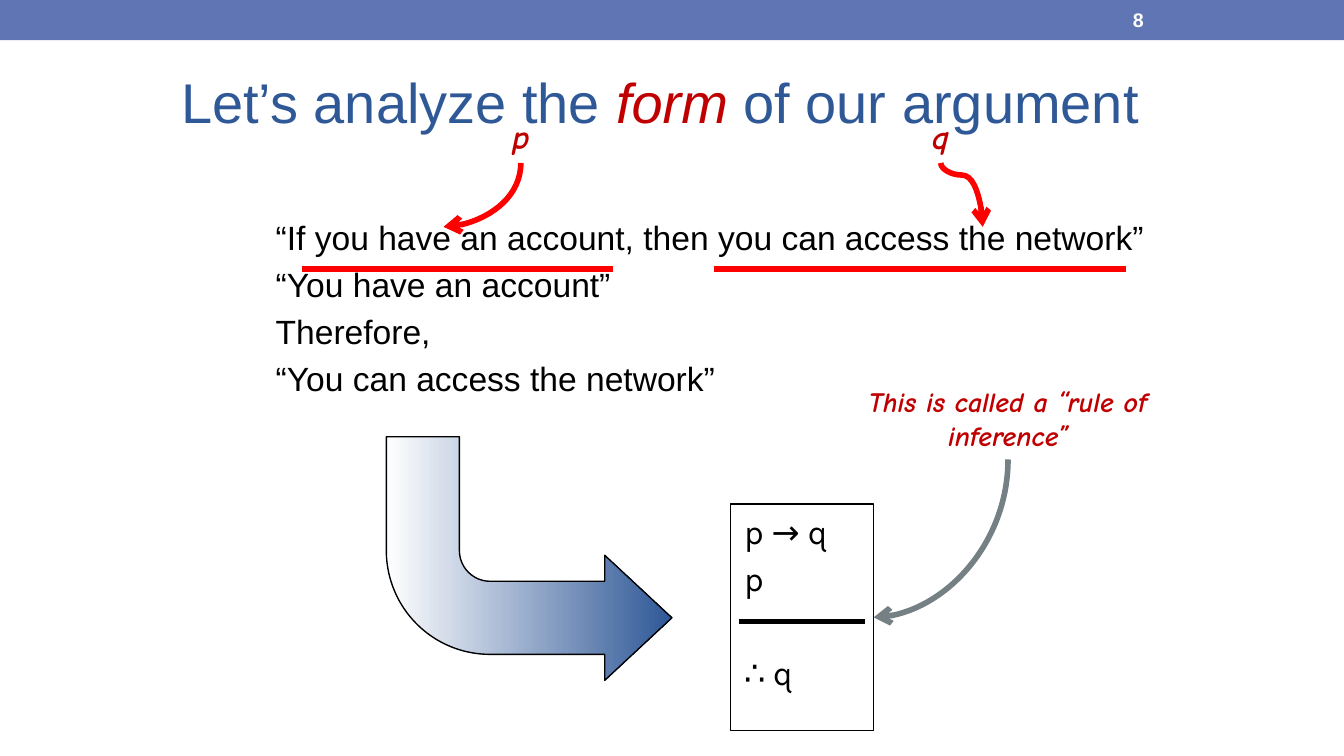
from dataclasses import dataclass

from lxml.etree import SubElement
from pptx import Presentation
from pptx.dml.color import RGBColor as Rgb
from pptx.enum.shapes import MSO_CONNECTOR as Link, MSO_SHAPE as Preset
from pptx.enum.text import MSO_ANCHOR as Anchor, PP_ALIGN as Align
from pptx.oxml.ns import qn
from pptx.util import Inches, Pt


@dataclass(frozen=True)
class Theme:
    blue: Rgb = Rgb(0x2F, 0x58, 0x97)
    band: Rgb = Rgb(0x60, 0x76, 0xB4)
    crimson: Rgb = Rgb(0xC0, 0, 0)
    red: Rgb = Rgb(0xFF, 0, 0)
    gray: Rgb = Rgb(0x75, 0x80, 0x85)
    black: Rgb = Rgb(0, 0, 0)
    white: Rgb = Rgb(0xFF, 0xFF, 0xFF)
    sans: str = "Arial"
    hand: str = "Comic Neue"
    logic: str = "Karla"
    title_size: float = 30
    text_size: float = 18
    note_size: float = 15
    number_size: float = 10.5
    thin: float = 0.75
    thick: float = 3


theme = Theme()
COLUMNS, ROWS = 160, 90
CELL = Inches(10) // COLUMNS

deck = Presentation()
deck.slide_width, deck.slide_height = CELL * COLUMNS, CELL * ROWS
page = deck.slides.add_slide(deck.slide_layouts[6])


def write(paragraphs, at, size=theme.text_size, font=theme.sans, color=theme.black,
          bold=False, italic=False, align=Align.LEFT, anchor=Anchor.TOP,
          before=0, margin=0, indent=0):
    """Add a text box; each paragraph is a list of (text, color, italic) or a plain string."""
    box = page.shapes.add_textbox(*(int(CELL * n) for n in at))
    frame = box.text_frame
    frame.word_wrap = True
    frame.vertical_anchor = anchor
    for number, content in enumerate(paragraphs):
        para = frame.paragraphs[0] if number == 0 else frame.add_paragraph()
        para.alignment = align
        para.space_before = Pt(before)
        properties = para._p.get_or_add_pPr()
        properties.set("marL", str(Inches(margin)))
        properties.set("indent", str(Inches(indent)))
        spans = [(content, color, italic)] if isinstance(content, str) else content
        for text, span_color, span_italic in spans:
            span = para.add_run()
            span.text = text
            span.font.name, span.font.size = font, Pt(size)
            span.font.bold, span.font.italic = bold, span_italic
            span.font.color.rgb = span_color
    return box


def connect(start, end, color, bend=None):
    """Draw a straight line, or a curved arrow that leaves downwards when a bend is given."""
    (x1, y1), (x2, y2) = start, end
    if bend:
        # The frame is turned a quarter, so its width is the vertical reach.
        middle_x, middle_y = (x1 + x2) / 2, (y1 + y2) / 2
        half_width, half_height = abs(y2 - y1) / 2, abs(x2 - x1) / 2
        x1, x2 = middle_x - half_width, middle_x + half_width
        y1, y2 = middle_y - half_height, middle_y + half_height
    line = page.shapes.add_connector(Link.CURVE if bend else Link.STRAIGHT,
                                     *(int(CELL * n) for n in (x1, y1, x2, y2)))
    line.line.color.rgb, line.line.width = color, Pt(theme.thick)
    properties = line._element.spPr
    if bend:
        to_right = end[0] > start[0]
        frame = properties.find(qn("a:xfrm"))
        frame.set("rot", str((270 if to_right else 90) * 60000))
        if to_right:
            frame.set("flipH", "1")
        geometry = properties.find(qn("a:prstGeom"))
        geometry.set("prst", bend)
        if bend == "curvedConnector3":
            guides = geometry.find(qn("a:avLst"))
            if guides is None:
                guides = SubElement(geometry, qn("a:avLst"))
            SubElement(guides, qn("a:gd"), name="adj1", fmla="val 18900")
        SubElement(line.line._get_or_add_ln(), qn("a:tailEnd"), type="arrow")
    SubElement(properties, qn("a:effectLst"))


# Header band, title and argument
band = page.shapes.add_shape(Preset.RECTANGLE, 0, 0, deck.slide_width, int(CELL * 4.8))
band.shadow.inherit = False
band.fill.solid()
band.fill.fore_color.rgb = theme.band
band.line.fill.background()

write([[("Let’s analyze the ", theme.blue, False), ("form ", theme.crimson, True),
        ("of our argument", theme.blue, False)]],
      (20, 6, 120, 12), size=theme.title_size, anchor=Anchor.MIDDLE)
write(["“If you have an account, then you can access the network”",
       "“You have an account”", "Therefore,", "“You can access the network”"],
      (29, 25, 111, 27), before=3.6, margin=0.5, indent=-0.36)

# Rule of inference; the conclusion stands one line lower, below the bar
rule = write(["p → q", "p", "∴ q"], (87, 60, 17, 27), font=theme.logic,
             before=3.6, margin=0.38, indent=-0.38)
rule.line.color.rgb, rule.line.width = theme.black, Pt(theme.thin)
rule.text_frame.paragraphs[-1].space_before = Pt(28.8)
connect((88, 74), (103, 74), theme.black)

# Bent arrow from the argument to the rule
arrow = page.shapes.add_shape(Preset.BENT_ARROW, *(CELL * n for n in (46, 52, 34, 29)))
arrow.shadow.inherit = False
arrow.rotation = 180
arrow._element.spPr.find(qn("a:xfrm")).set("flipH", "1")
for index, share in enumerate((0.3, 0.257, 0.276, 0.426)):
    arrow.adjustments[index] = share
arrow.fill.gradient()
arrow.fill.gradient_angle = 0
for stop, color in zip(arrow.fill.gradient_stops, (theme.white, theme.blue)):
    stop.color.rgb = color
arrow.line.color.rgb, arrow.line.width = theme.black, Pt(theme.thin)

# Underlined propositions
for left, right in ((36, 73), (85, 134)):
    connect((left, 32), (right, 32), theme.red)

# Handwritten notes, each with a curved arrow from its bottom centre
notes = (
    ("This is called a “rule of inference”", (100, 45, 40, 9.7), theme.note_size,
     (104, 73.5), theme.gray, "curvedConnector2"),
    ("p", (42, 13, 40, 6.4), theme.text_size, (52.8, 27), theme.red, "curvedConnector2"),
    ("q", (92, 13, 40, 6.4), theme.text_size, (117, 27), theme.red, "curvedConnector3"),
)
for text, at, size, target, color, bend in notes:
    left, top, width, height = at
    write([text], at, size=size, font=theme.hand, color=theme.crimson,
          bold=True, italic=True, align=Align.CENTER)
    connect((left + width / 2, top + height), target, color, bend)

write(["8"], (133.3, 0.2, 18.7, 4.3), size=theme.number_size, color=theme.white,
      bold=True, anchor=Anchor.MIDDLE)

deck.save("out.pptx")
